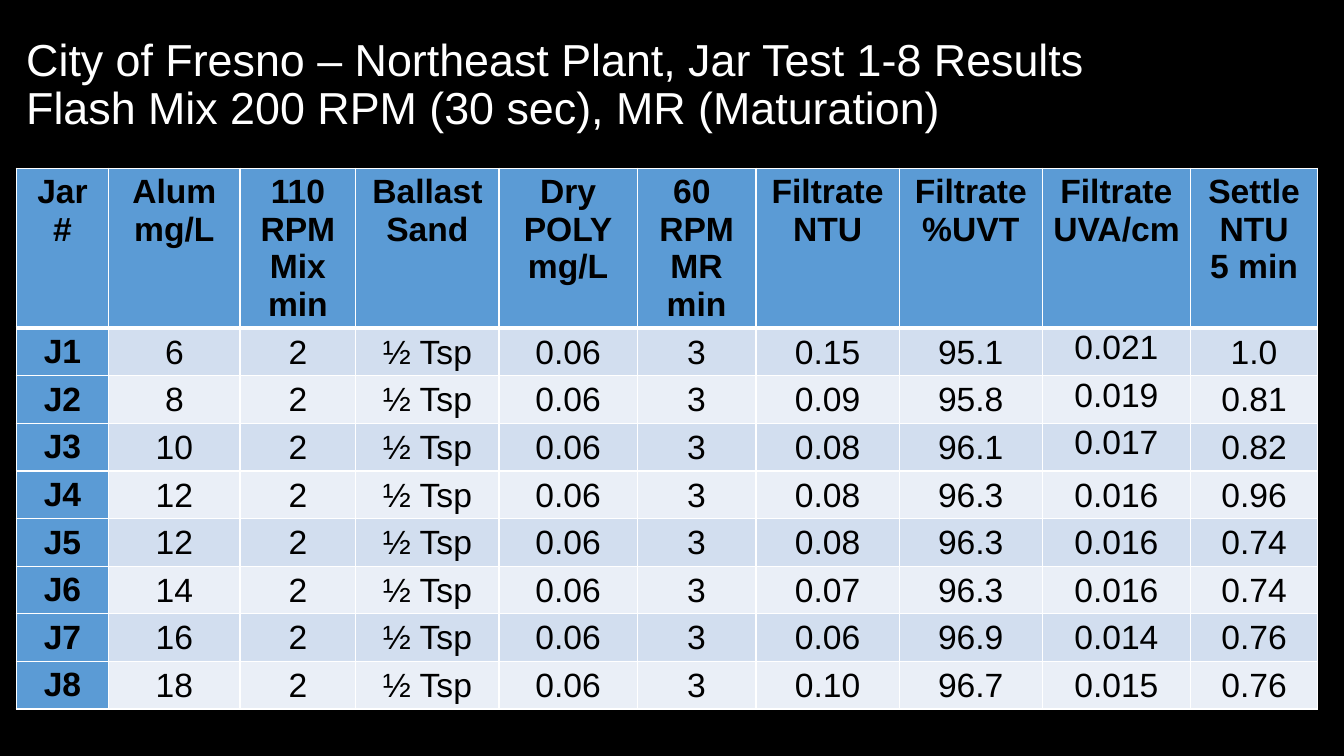
from copy import deepcopy

from lxml import etree
from pptx import Presentation
from pptx.dml.color import RGBColor
from pptx.enum.text import MSO_ANCHOR, MSO_AUTO_SIZE, PP_ALIGN
from pptx.oxml.ns import qn
from pptx.util import Inches, Pt

LEFT, CENTER = PP_ALIGN.LEFT, PP_ALIGN.CENTER
TOP, MIDDLE = MSO_ANCHOR.TOP, MSO_ANCHOR.MIDDLE
NO_AUTOFIT = MSO_AUTO_SIZE.NONE

BLACK = RGBColor(0x00, 0x00, 0x00)
WHITE = RGBColor(0xFF, 0xFF, 0xFF)
BLUE = RGBColor(0x5B, 0x9B, 0xD5)
BANDS = (RGBColor(0xD2, 0xDE, 0xEF), RGBColor(0xEA, 0xEF, 0xF7))
FONT = "Arial"

HEADLINE = (
    "City of Fresno – Northeast Plant, Jar Test 1-8 Results",
    "Flash Mix 200 RPM (30 sec), MR (Maturation)",
)
COLUMNS = [
    ([("Jar", "#")], 0.92),
    ([("Alum",), ("mg/L",)], 1.3),
    ([("110 RPM",), ("Mix",), ("min",)], 1.15),
    ([("Ballast",), ("Sand",)], 1.42),
    ([("Dry",), ("POLY",), ("mg/L",)], 1.37),
    ([("60 ",), ("RPM",), ("MR",), ("min",)], 1.18),
    ([("Filtrate",), ("NTU",)], 1.42),
    ([("Filtrate",), ("%UVT",)], 1.42),
    ([("Filtrate",), ("UVA/cm",)], 1.47),
    ([("Settle",), ("NTU",), ("5 min",)], 1.26),
]
MIX_MIN, SAND, POLYMER, MATURATION_MIN = "2", "½ Tsp", "0.06", "3"
JARS = [
    ("J1", "6", "0.15", "95.1", "0.021", "1.0"),
    ("J2", "8", "0.09", "95.8", "0.019", "0.81"),
    ("J3", "10", "0.08", "96.1", "0.017", "0.82"),
    ("J4", "12", "0.08", "96.3", "0.016", "0.96"),
    ("J5", "12", "0.08", "96.3", "0.016", "0.74"),
    ("J6", "14", "0.07", "96.3", "0.016", "0.74"),
    ("J7", "16", "0.06", "96.9", "0.014", "0.76"),
    ("J8", "18", "0.10", "96.7", "0.015", "0.76"),
]
UVA_COLUMN = 8
TOP_ALIGNED_UVA_ROWS = (1, 2, 3)
HEADER_HEIGHT, JAR_HEIGHT = 1.58, 0.47


def add_lines(paragraph, lines, size, color, bold, align):
    paragraph.alignment = align
    for index, line in enumerate(lines):
        if index:
            paragraph.add_line_break()
            paragraph._p[-1].append(deepcopy(run._r.rPr))
        run = paragraph.add_run()
        run.text = line
        run.font.name = FONT
        run.font.size = Pt(size)
        run.font.bold = bold
        run.font.color.rgb = color


def add_borders(cell, top, bottom):
    properties = cell._tc.get_or_add_tcPr()
    for side, width in (("L", 1), ("R", 1), ("T", top), ("B", bottom)):
        line = etree.SubElement(properties, qn(f"a:ln{side}"), w=str(Pt(width)))
        fill = etree.SubElement(line, qn("a:solidFill"))
        etree.SubElement(fill, qn("a:srgbClr"), val=str(WHITE))


def fill_cell(cell, row, column, paragraphs):
    heading = row == 0 or column == 0
    add_borders(cell, 3 if row == 1 else 1, 3 if row == 0 else 1)
    cell.fill.solid()
    cell.fill.fore_color.rgb = BLUE if heading else BANDS[(row - 1) % 2]
    if not heading:
        cell.margin_left = cell.margin_right = cell.margin_top = Inches(0.01)
        cell.margin_bottom = 0
        raised = column == UVA_COLUMN and row in TOP_ALIGNED_UVA_ROWS
        cell.vertical_anchor = TOP if raised else MIDDLE
    frame = cell.text_frame
    for index, lines in enumerate(paragraphs):
        paragraph = frame.add_paragraph() if index else frame.paragraphs[0]
        add_lines(paragraph, lines, 24, BLACK, heading, CENTER)


def add_headline(slide):
    headline = slide.shapes.title
    headline.left, headline.top = Inches(0.16), Inches(0.13)
    headline.width, headline.height = Inches(12.26), Inches(1.45)
    frame = headline.text_frame
    frame.word_wrap = True
    frame.auto_size = NO_AUTOFIT
    frame.vertical_anchor = MIDDLE
    frame.paragraphs[0].line_spacing = 0.9
    add_lines(frame.paragraphs[0], HEADLINE, 32, WHITE, False, LEFT)


def add_results(slide):
    rows = [[heading for heading, _ in COLUMNS]]
    for jar, alum, *measured in JARS:
        values = (jar, alum, MIX_MIN, SAND, POLYMER, MATURATION_MIN, *measured)
        rows.append([[(value,)] for value in values])
    width = sum(column_width for _, column_width in COLUMNS)
    height = HEADER_HEIGHT + JAR_HEIGHT * len(JARS)
    results = slide.shapes.add_table(
        len(rows), len(COLUMNS),
        Inches(0.16), Inches(1.67), Inches(width), Inches(height),
    ).table
    for column, (_, column_width) in zip(results.columns, COLUMNS):
        column.width = Inches(column_width)
    for r, row in enumerate(rows):
        results.rows[r].height = Inches(JAR_HEIGHT if r else HEADER_HEIGHT)
        for c, paragraphs in enumerate(row):
            fill_cell(results.cell(r, c), r, c, paragraphs)


def main():
    """Build the jar test results slide."""
    deck = Presentation()
    deck.slide_width, deck.slide_height = Inches(13.33), Inches(7.5)
    slide = deck.slides.add_slide(deck.slide_layouts[5])
    slide.background.fill.solid()
    slide.background.fill.fore_color.rgb = BLACK
    add_headline(slide)
    add_results(slide)
    deck.save("out.pptx")


if __name__ == "__main__":
    main()
